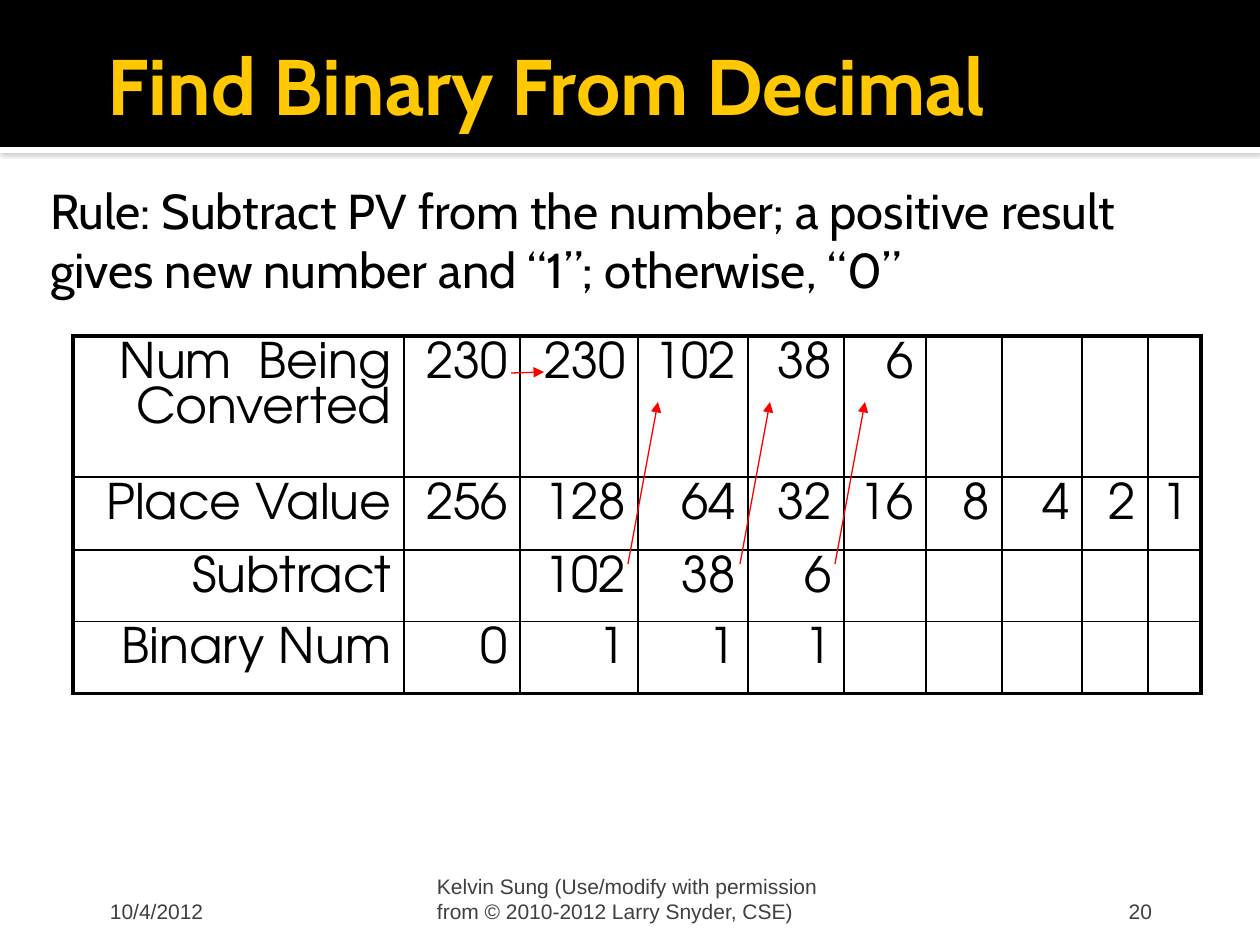
"""Build a slide that works out a binary number from a decimal one in a table."""
from dataclasses import dataclass

import lxml.etree
import pptx
import pptx.dml.color
import pptx.enum.shapes
import pptx.enum.text
import pptx.oxml
import pptx.oxml.ns
import pptx.util

PX_PER_INCH = 126
BLACK = pptx.dml.color.RGBColor(0x00, 0x00, 0x00)
WHITE = pptx.dml.color.RGBColor(0xFF, 0xFF, 0xFF)
GOLD = pptx.dml.color.RGBColor(0xFF, 0xC8, 0x00)
GRAY = pptx.dml.color.RGBColor(0x3F, 0x3F, 0x3F)
RED = pptx.dml.color.RGBColor(0xFF, 0x00, 0x00)
SHADOW_GRAY = pptx.dml.color.RGBColor(0x80, 0x80, 0x80)
ANCHOR = pptx.enum.text.MSO_ANCHOR
ALIGN = pptx.enum.text.PP_ALIGN


@dataclass(frozen=True)
class Rect:
    left: int
    top: int
    width: int
    height: int


@dataclass(frozen=True)
class Style:
    font: str
    size: int
    color: pptx.dml.color.RGBColor
    bold: bool = False


@dataclass(frozen=True)
class Label:
    text: str
    rect: Rect
    style: Style
    margins: tuple[int, int, int, int]
    anchor: ANCHOR = ANCHOR.BOTTOM
    align: ALIGN = ALIGN.LEFT


@dataclass(frozen=True)
class Arrow:
    start: tuple[int, int]
    end: tuple[int, int]


TITLE = Style("Cabin", 45, GOLD, bold=True)
BODY = Style("Cabin", 28, BLACK)
CELL = Style("TeX Gyre Adventor", 28, BLACK)
FOOTER = Style("Arial", 12, GRAY)

LABELS = [
    Label("Find Binary From Decimal", Rect(95, 21, 1071, 126), TITLE, (13, 6, 6, 6), ANCHOR.MIDDLE),
    Label(
        "Rule: Subtract PV from the number; a positive result gives new number and “1”; otherwise, “0”",
        Rect(42, 168, 1176, 567), BODY, (8, 13, 13, 6), ANCHOR.TOP,
    ),
    Label("10/4/2012", Rect(95, 861, 262, 63), FOOTER, (15, 6, 6, 0)),
    Label(
        "Kelvin Sung (Use/modify with permission from © 2010-2012 Larry Snyder, CSE)",
        Rect(431, 861, 399, 63), FOOTER, (6, 6, 6, 0),
    ),
    Label("20", Rect(903, 861, 262, 63), FOOTER, (13, 6, 13, 0), align=ALIGN.RIGHT),
]

TABLE_LEFT, TABLE_TOP = 73, 336
COLUMN_WIDTHS = [331, 116, 118, 110, 96, 82, 76, 80, 66, 53]
ROW_HEIGHTS = [141, 73, 70, 72]
ROWS = [
    ["Num  Being Converted", "230", "230", "102", "38", "6"],
    ["Place Value", "256", "128", "64", "32", "16", "8", "4", "2", "1"],
    ["Subtract", "", "102", "38", "6"],
    ["Binary Num", "0", "1", "1", "1"],
]
ARROWS = [Arrow((511, 373), (544, 372))] + [
    Arrow((left, 564), (left + 30, 402)) for left in (628, 740, 835)
]


def px(length: int) -> pptx.util.Emu:
    return pptx.util.Emu(round(length * 914400 / PX_PER_INCH))


def place(rect: Rect) -> tuple[pptx.util.Emu, ...]:
    return px(rect.left), px(rect.top), px(rect.width), px(rect.height)


def set_text(frame, text: str, style: Style, align: ALIGN) -> None:
    para = frame.paragraphs[0]
    para.text = text
    para.alignment = align
    para.font.name = style.font
    para.font.size = pptx.util.Pt(style.size)
    para.font.bold = style.bold
    para.font.color.rgb = style.color


def add_label(page, label: Label) -> None:
    frame = page.shapes.add_textbox(*place(label.rect)).text_frame
    frame.word_wrap = True
    frame.vertical_anchor = label.anchor
    frame.margin_left, frame.margin_top, frame.margin_right, frame.margin_bottom = map(px, label.margins)
    set_text(frame, label.text, label.style, label.align)


def add_band(page, rect: Rect, color: pptx.dml.color.RGBColor):
    band = page.shapes.add_shape(pptx.enum.shapes.MSO_SHAPE.RECTANGLE, *place(rect))
    band.shadow.inherit = False
    band.fill.solid()
    band.fill.fore_color.rgb = color
    band.line.fill.background()
    return band


def add_shadow(band) -> None:
    effects = band._element.spPr.find(pptx.oxml.ns.qn("a:effectLst"))
    effects.append(pptx.oxml.parse_xml(
        f'<a:outerShdw {pptx.oxml.ns.nsdecls("a")} blurRad="{pptx.util.Pt(2.5)}" '
        f'dist="{pptx.util.Pt(0.8)}" dir="5400000" algn="t" rotWithShape="0">'
        f'<a:srgbClr val="{SHADOW_GRAY}"><a:alpha val="60000"/></a:srgbClr></a:outerShdw>'
    ))


def set_borders(cell, widths: dict[str, float]) -> None:
    properties = cell._tc.get_or_add_tcPr()
    for index, (side, width) in enumerate(widths.items()):
        properties.insert(index, pptx.oxml.parse_xml(
            f'<a:{side} {pptx.oxml.ns.nsdecls("a")} w="{pptx.util.Pt(width)}">'
            f'<a:solidFill><a:srgbClr val="{BLACK}"/></a:solidFill></a:{side}>'
        ))


def add_conversion_table(page) -> None:
    rect = Rect(TABLE_LEFT, TABLE_TOP, sum(COLUMN_WIDTHS), sum(ROW_HEIGHTS))
    table = page.shapes.add_table(len(ROW_HEIGHTS), len(COLUMN_WIDTHS), *place(rect)).table
    table.first_row = table.horz_banding = False
    for column, width in zip(table.columns, COLUMN_WIDTHS):
        column.width = px(width)
    last_row, last_column = len(ROW_HEIGHTS) - 1, len(COLUMN_WIDTHS) - 1
    for row, (height, texts) in enumerate(zip(ROW_HEIGHTS, ROWS)):
        table.rows[row].height = px(height)
        for column in range(len(COLUMN_WIDTHS)):
            cell = table.cell(row, column)
            cell.fill.background()
            if column < len(texts) and texts[column]:
                set_text(cell.text_frame, texts[column], CELL, ALIGN.RIGHT)
            outer = {"lnL": column == 0, "lnR": column == last_column,
                     "lnT": row == 0, "lnB": row == last_row}
            set_borders(cell, {side: 2.25 if edge else 1 for side, edge in outer.items()})


def add_arrow(page, arrow: Arrow) -> None:
    line = page.shapes.add_connector(
        pptx.enum.shapes.MSO_CONNECTOR.STRAIGHT, *map(px, arrow.start + arrow.end)
    )
    line.line.color.rgb = RED
    line.line.width = pptx.util.Pt(0.75)
    qn = pptx.oxml.ns.qn
    lxml.etree.SubElement(line.line._get_or_add_ln(), qn("a:tailEnd"), type="triangle")
    lxml.etree.SubElement(line._element.spPr, qn("a:effectLst"))


def main() -> None:
    deck = pptx.Presentation()
    deck.slide_width, deck.slide_height = px(1260), px(945)
    page = deck.slides.add_slide(deck.slide_layouts[6])
    add_shadow(add_band(page, Rect(0, 147, 1260, 6), WHITE))
    add_band(page, Rect(0, 0, 1260, 147), BLACK)
    for label in LABELS:
        add_label(page, label)
    add_conversion_table(page)
    for arrow in ARROWS:
        add_arrow(page, arrow)
    deck.save("out.pptx")


if __name__ == "__main__":
    main()
